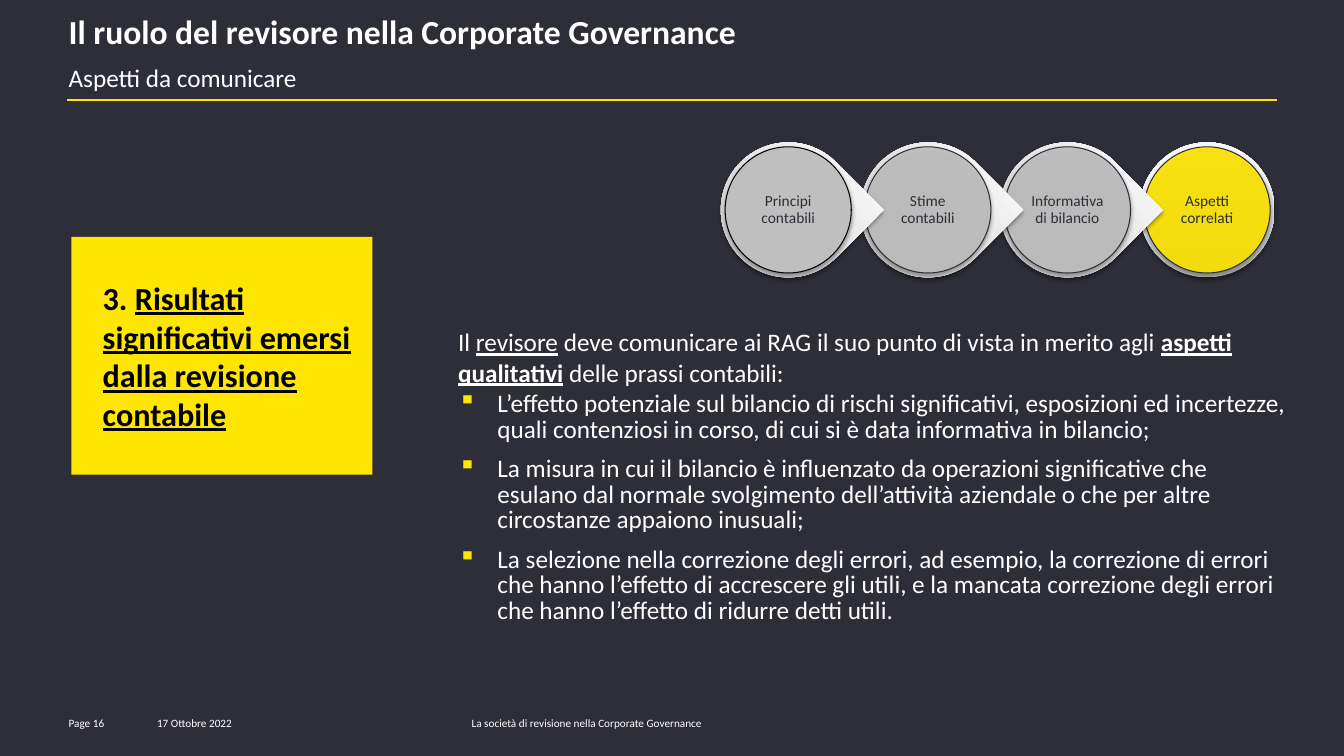
"""Build the slide on the aspects an auditor communicates about accounting practices."""
from pptx import Presentation
from pptx.dml.color import RGBColor
from pptx.enum.shapes import MSO_CONNECTOR, MSO_SHAPE
from pptx.enum.text import MSO_ANCHOR, MSO_AUTO_SIZE, PP_ALIGN
from pptx.oxml import parse_xml
from pptx.oxml.ns import nsdecls, qn
from pptx.util import Cm, Pt

LEFT, CENTER = PP_ALIGN.LEFT, PP_ALIGN.CENTER
TOP, MIDDLE = MSO_ANCHOR.TOP, MSO_ANCHOR.MIDDLE
ELLIPSE, TEAR, RECT = MSO_SHAPE.OVAL, MSO_SHAPE.TEAR, MSO_SHAPE.RECTANGLE
FONT = "Calibri"
DARK, YELLOW, WHITE, BLACK, GRAY = "2E2E38", "FFE600", "FFFFFF", "000000", "BFBFBF"

HEADING = "Il ruolo del revisore nella Corporate Governance"
SUBTITLE = "Aspetti da comunicare"
TOPIC = [("3. ", {}),
         ("Risultati significativi emersi dalla revisione contabile", {"underline": True})]
INTRO = [("Il ", {}), ("revisore", {"underline": True}),
         (" deve comunicare ai RAG il suo punto di vista in merito agli ", {}),
         ("aspetti qualitativi", {"bold": True, "underline": True}),
         (" delle prassi contabili:", {})]
POINTS = [
    "L’effetto potenziale sul bilancio di rischi significativi, esposizioni ed incertezze, "
    "quali contenziosi in corso, di cui si è data informativa in bilancio;",
    "La misura in cui il bilancio è influenzato da operazioni significative che esulano dal "
    "normale svolgimento dell’attività aziendale o che per altre circostanze appaiono inusuali;",
    "La selezione nella correzione degli errori, ad esempio, la correzione di errori che hanno "
    "l’effetto di accrescere gli utili, e la mancata correzione degli errori che hanno "
    "l’effetto di ridurre detti utili.",
]
STEPS = [("Principi contabili", GRAY, BLACK, 100), ("Stime contabili", GRAY, DARK, 90),
         ("Informativa di bilancio", GRAY, DARK, 90), ("Aspetti correlati", YELLOW, DARK, 90)]
FOOTERS = [("Page 16", 1.73, 1.85), ("17 Ottobre 2022", 3.96, 3.3),
           ("La società di revisione nella Corporate Governance", 11.89, 8.59)]
RING_STOPS = [(0, "BEBEBE"), (80, "F7F7F7"), (100, "F8F8F8")]

STEP_LEFT, STEP_TOP, STEP_PITCH = 18.17, 3.59, 3.52
RING, DISC, LABEL = 3.4, 3.18, 2.26


def rgb(value):
    return RGBColor.from_string(value)


def setup_frame(sp, insets=(0, 0, 0, 0), anchor=TOP):
    tf = sp.text_frame
    tf.word_wrap = True
    tf.auto_size = MSO_AUTO_SIZE.NONE
    tf.vertical_anchor = anchor
    tf.margin_left, tf.margin_top, tf.margin_right, tf.margin_bottom = map(Cm, insets)
    return tf


def write(p, text, size=18, color=WHITE, bold=False, align=LEFT, spacing=1.0,
          before=0, after=0, indent=0, bullet=None):
    p.alignment, p.line_spacing = align, spacing
    p.space_before, p.space_after = Pt(before), Pt(after)
    for part, style in [(text, {})] if isinstance(text, str) else text:
        r = p.add_run()
        r.text = part
        r.font.name, r.font.size = FONT, Pt(size)
        r.font.color.rgb = rgb(color)
        r.font.bold = style.get("bold", bold)
        r.font.underline = style.get("underline", False)
    if bullet:
        pPr = p._p.get_or_add_pPr()
        pPr.set("marL", str(Cm(indent)))
        pPr.set("indent", str(-Cm(indent)))
        pPr.append(parse_xml(f'<a:buClr {nsdecls("a")}><a:srgbClr val="{YELLOW}"/></a:buClr>'))
        pPr.append(parse_xml(f'<a:buChar {nsdecls("a")} char="{bullet}"/>'))


def add_text(shapes, text, box, insets=(0, 0, 0, 0), anchor=TOP, **fmt):
    sp = shapes.add_textbox(*map(Cm, box))
    tf = setup_frame(sp, insets, anchor)
    write(tf.paragraphs[0], text, **fmt)
    return tf


def add_shape(shapes, kind, box, fill, line=None, alpha=100):
    sp = shapes.add_shape(kind, *map(Cm, box))
    sp.shadow.inherit = False
    sp.fill.solid()
    sp.fill.fore_color.rgb = rgb(fill)
    if alpha < 100:
        clr = sp._element.spPr.find(qn("a:solidFill"))[0]
        clr.append(parse_xml(f'<a:alpha {nsdecls("a")} val="{alpha * 1000}"/>'))
    if line:
        sp.line.color.rgb = rgb(line)
        sp.line.width = Pt(0.75)
    else:
        sp.line.fill.background()
    return sp


def add_shadow(sp):
    sp._element.spPr.find(qn("a:effectLst")).append(parse_xml(
        f'<a:outerShdw {nsdecls("a")} blurRad="{Pt(3.1)}" dist="{Pt(1.8)}" dir="5400000" '
        f'rotWithShape="0"><a:srgbClr val="{BLACK}"><a:alpha val="35000"/></a:srgbClr>'
        '</a:outerShdw>'))


def set_gradient(sp, stops):
    gs = "".join(f'<a:gs pos="{pos * 1000}"><a:srgbClr val="{color}"/></a:gs>'
                 for pos, color in stops)
    solid = sp._element.spPr.find(qn("a:solidFill"))
    solid.getparent().replace(solid, parse_xml(
        f'<a:gradFill {nsdecls("a")} rotWithShape="1"><a:gsLst>{gs}</a:gsLst>'
        '<a:lin ang="16200000" scaled="0"/></a:gradFill>'))


def add_step(shapes, index, label, fill, line, alpha):
    def centred(size):
        gap = (RING - size) / 2
        return STEP_LEFT + index * STEP_PITCH + gap, STEP_TOP + gap, size, size

    last = index == len(STEPS) - 1
    ring = add_shape(shapes, ELLIPSE if last else TEAR, centred(RING), GRAY)
    if not last:
        ring.rotation = 45
    set_gradient(ring, RING_STOPS)
    add_shadow(ring)
    add_shadow(add_shape(shapes, ELLIPSE, centred(DISC), fill, line, alpha))
    add_text(shapes, label, centred(LABEL), (0.05,) * 4, MIDDLE,
             size=11, color=DARK, align=CENTER, spacing=0.9)


def main():
    prs = Presentation()
    prs.slide_width, prs.slide_height = Cm(33.88), Cm(19.05)
    slide = prs.slides.add_slide(prs.slide_layouts[5])
    shapes = slide.shapes
    slide.background.fill.solid()
    slide.background.fill.fore_color.rgb = rgb(DARK)

    rule = shapes.add_connector(MSO_CONNECTOR.STRAIGHT, Cm(1.7), Cm(2.52), Cm(32.18), Cm(2.52))
    rule.line.color.rgb = rgb(YELLOW)
    rule.line.width = Pt(1.5)
    rule._element.spPr.append(parse_xml(f'<a:effectLst {nsdecls("a")}/>'))

    title = shapes.title
    title.left, title.top, title.width, title.height = map(Cm, (1.73, 1.68, 30.5, 0.94))
    write(setup_frame(title).paragraphs[0], SUBTITLE, spacing=0.85)
    add_text(shapes, HEADING, (1.73, 0.33, 21.59, 0.97), (0, 0.1, 0, 0),
             size=24, bold=True, spacing=0.85, after=6)

    tf = add_text(shapes, INTRO, (11.3, 8.1, 21.41, 7.16), (0.25, 0.13, 0.25, 0.13), before=3.6)
    for point in POINTS:
        write(tf.add_paragraph(), point, spacing=0.85, before=3.6, after=6,
              indent=0.99, bullet="▪")

    topic = add_shape(shapes, RECT, (1.8, 5.97, 7.59, 5.99), YELLOW)
    tf = setup_frame(topic, (0.79, 0.15, 0.15, 0.15), MIDDLE)
    write(tf.paragraphs[0], TOPIC, size=23, color=BLACK, bold=True)

    for index, step in reversed(list(enumerate(STEPS))):
        add_step(shapes, index, *step)
    for text, left, width in FOOTERS:
        add_text(shapes, text, (left, 17.97, width, 0.51), anchor=MIDDLE, size=8)
    prs.save("out.pptx")


if __name__ == "__main__":
    main()
